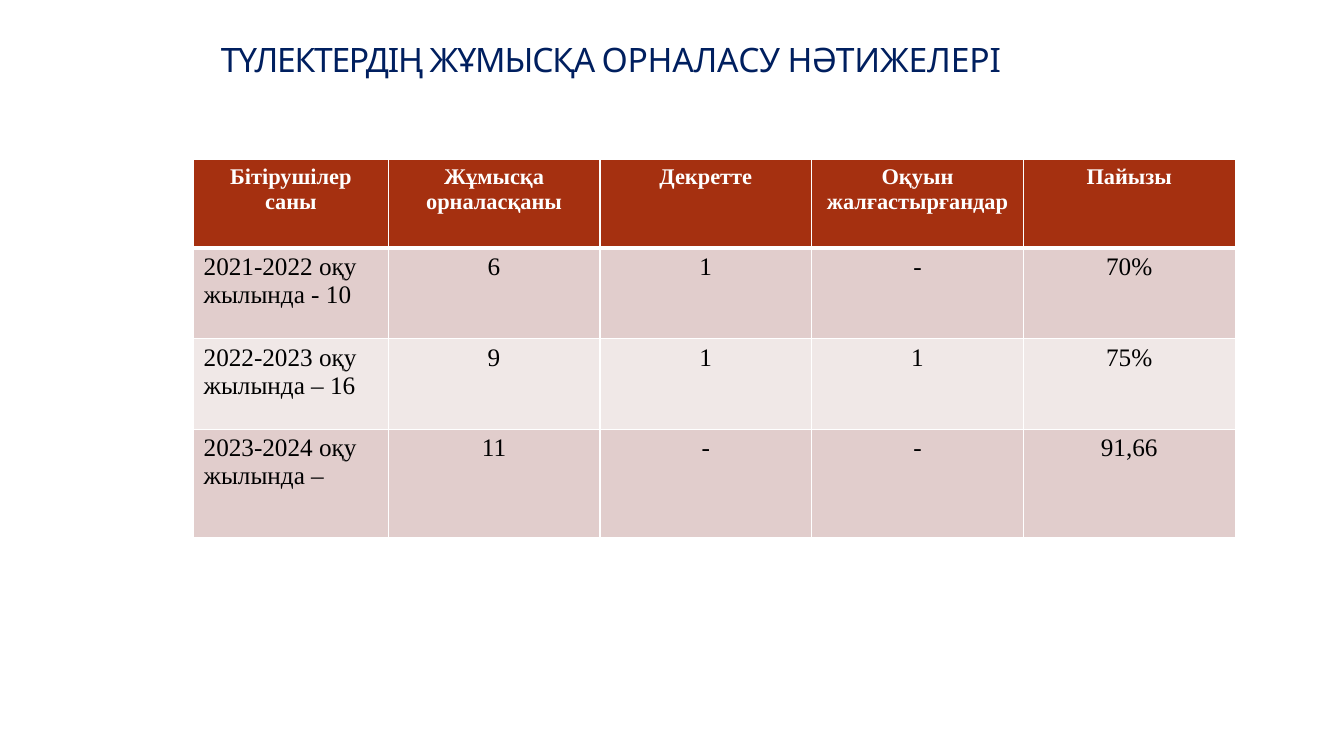
from dataclasses import dataclass

import lxml.etree
import pptx
import pptx.dml.color
import pptx.enum.text
import pptx.oxml.ns
import pptx.presentation
import pptx.slide
import pptx.table
import pptx.text.text
import pptx.util
from pptx.util import Inches

COLORS = {
    "title": "001F5F",
    "header": "A53010",
    "odd_row": "E1CDCC",
    "even_row": "F0E8E7",
    "white": "FFFFFF",
    "black": "000000",
}
TITLE_FONT = "Cabin"
TABLE_FONT = "Times New Roman"
COLUMN_WIDTHS = [1.93, 2.1, 2.1, 2.1, 2.1]
ALIGN = pptx.enum.text.PP_ALIGN


@dataclass(frozen=True)
class TitleWord:
    text: str
    spacing: float


@dataclass(frozen=True)
class TableRow:
    height: float
    texts: tuple[str, ...]


TITLE_WORDS = [
    TitleWord("ТҮЛЕКТЕРДІҢ ", -0.9),
    TitleWord("ЖҰМЫСҚА ", -0.8),
    TitleWord("ОРНАЛАСУ ", -0.2),
    TitleWord("НӘТИЖЕЛЕРІ", -0.1),
]
ROWS = [
    TableRow(0.88, ("Бітірушілер саны", "Жұмысқа орналасқаны", "Декретте",
                    "Оқуын жалғастырғандар", "Пайызы")),
    TableRow(0.9, ("2021-2022 оқу жылында - 10", "6", "1", "-", "70%")),
    TableRow(0.9, ("2022-2023 оқу жылында – 16", "9", "1", "1", "75%")),
    TableRow(1.07, ("2023-2024 оқу жылында –", "11", "-", "-", "91,66")),
]


def rgb(name: str) -> pptx.dml.color.RGBColor:
    return pptx.dml.color.RGBColor.from_string(COLORS[name])


def format_run(run: pptx.text.text._Run, font: str, size: float, color: str, bold: bool = False) -> None:
    run.font.name = font
    run.font.size = pptx.util.Pt(size)
    run.font.bold = bold
    run.font.color.rgb = rgb(color)


def add_title(slide: pptx.slide.Slide) -> None:
    title = slide.shapes.title
    title.left, title.top = Inches(2.19), Inches(0.38)
    title.width, title.height = Inches(8.28), Inches(0.42)
    frame = title.text_frame
    frame.margin_left = frame.margin_right = frame.margin_bottom = 0
    frame.margin_top = Inches(0.01)
    frame.word_wrap = True
    frame.vertical_anchor = pptx.enum.text.MSO_ANCHOR.TOP
    frame.auto_size = pptx.enum.text.MSO_AUTO_SIZE.SHAPE_TO_FIT_TEXT
    paragraph = frame.paragraphs[0]
    paragraph.alignment = ALIGN.LEFT
    paragraph.space_before = pptx.util.Pt(1)
    for word in TITLE_WORDS:
        run = paragraph.add_run()
        run.text = word.text
        format_run(run, TITLE_FONT, 24, "title")
        run.font._element.set("spc", str(round(word.spacing * 100)))


def set_border(cell: pptx.table._Cell, side: str, width: float) -> None:
    qn = pptx.oxml.ns.qn
    properties = cell._tc.get_or_add_tcPr()
    line = lxml.etree.SubElement(properties, qn(f"a:ln{side}"), w=str(pptx.util.Pt(width)))
    fill = lxml.etree.SubElement(line, qn("a:solidFill"))
    lxml.etree.SubElement(fill, qn("a:srgbClr"), val=COLORS["white"])


def fill_cell(cell: pptx.table._Cell, text: str, row: int, column: int) -> None:
    is_header = row == 0
    for side in "LRTB":
        touches_header_rule = (row, side) in ((0, "B"), (1, "T"))
        set_border(cell, side, 3 if touches_header_rule else 1)
    cell.fill.solid()
    body_color = "odd_row" if row % 2 else "even_row"
    cell.fill.fore_color.rgb = rgb("header" if is_header else body_color)
    cell.text_frame.text = text
    paragraph = cell.text_frame.paragraphs[0]
    paragraph.alignment = ALIGN.CENTER if is_header or column else ALIGN.LEFT
    format_run(paragraph.runs[0], TABLE_FONT, 16 if is_header else 18,
               "white" if is_header else "black", bold=is_header)


def add_results_table(slide: pptx.slide.Slide) -> None:
    table = slide.shapes.add_table(
        len(ROWS), len(COLUMN_WIDTHS), Inches(1.92), Inches(1.58),
        Inches(sum(COLUMN_WIDTHS)), Inches(sum(row.height for row in ROWS)),
    ).table
    for column, width in zip(table.columns, COLUMN_WIDTHS):
        column.width = Inches(width)
    for row_index, row in enumerate(ROWS):
        table.rows[row_index].height = Inches(row.height)
        for column_index, text in enumerate(row.texts):
            fill_cell(table.cell(row_index, column_index), text, row_index, column_index)


def main() -> None:
    presentation = pptx.Presentation()
    presentation.slide_width, presentation.slide_height = Inches(13.33), Inches(7.5)
    slide = presentation.slides.add_slide(presentation.slide_layouts.get_by_name("Title Only"))
    add_title(slide)
    add_results_table(slide)
    presentation.save("out.pptx")


if __name__ == "__main__":
    main()
